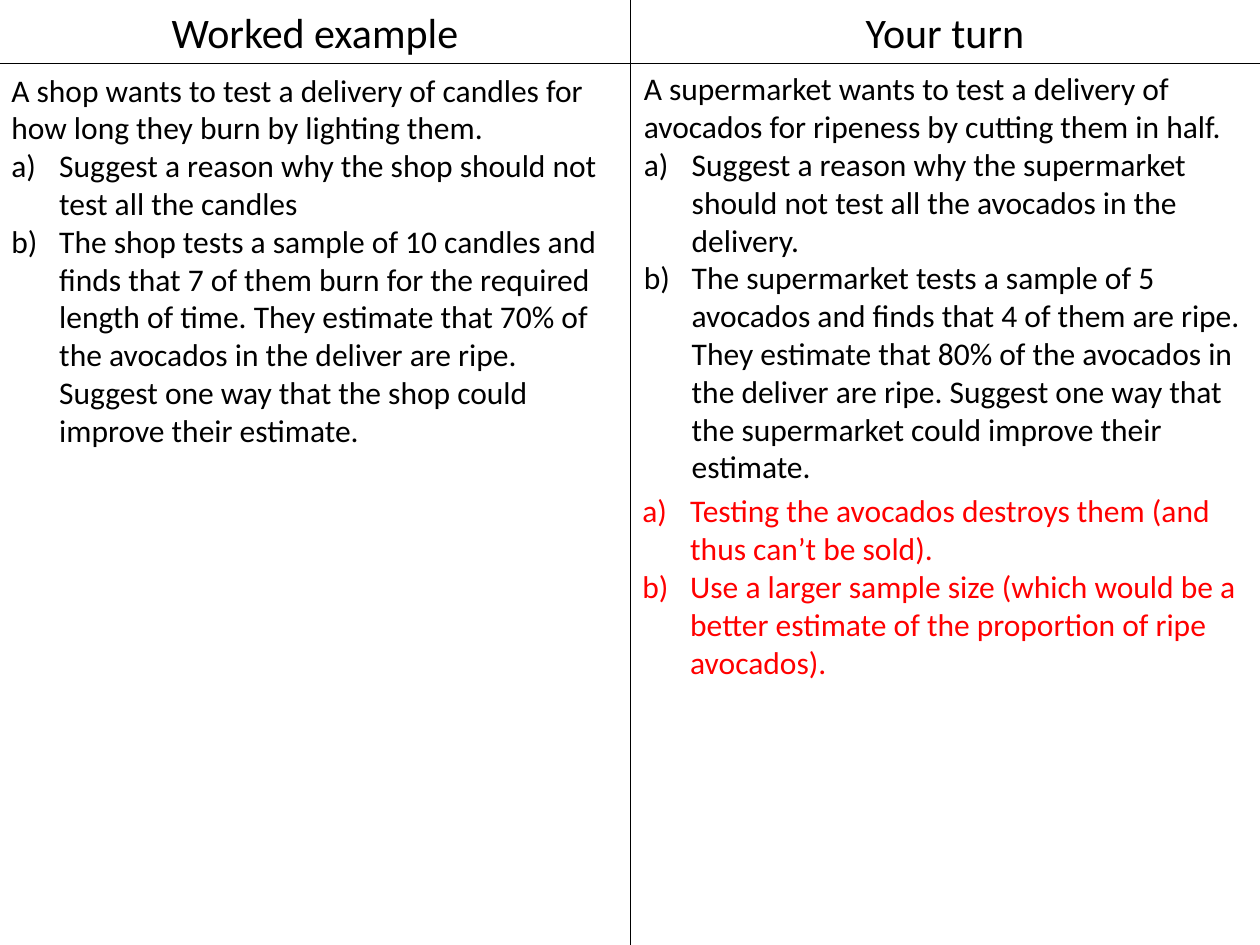
from lxml import etree
from pptx import Presentation
from pptx.dml.color import RGBColor
from pptx.enum.shapes import MSO_CONNECTOR
from pptx.enum.text import MSO_ANCHOR, MSO_AUTO_SIZE, PP_ALIGN
from pptx.oxml.ns import qn
from pptx.util import Inches, Pt

STRAIGHT = MSO_CONNECTOR.STRAIGHT
TOP = MSO_ANCHOR.TOP
NO_FIT = MSO_AUTO_SIZE.NONE
LEFT, CENTER = PP_ALIGN.LEFT, PP_ALIGN.CENTER
COMPARISON_LAYOUT = 4
WIDTH, HEIGHT = Inches(10), Inches(7.5)
COLUMN, HEADER = WIDTH // 2, HEIGHT // 15
HANG = Inches(0.38)
BLACK, RED = "000000", "FF0000"

FRAME_FORMAT = {"word_wrap": True, "auto_size": NO_FIT, "vertical_anchor": TOP,
                "margin_left": Inches(0.1), "margin_right": Inches(0.1),
                "margin_top": Inches(0.05), "margin_bottom": Inches(0.05)}
PARA_FORMAT = {"space_before": Pt(0), "space_after": Pt(0), "line_spacing": 1.0}

WORKED_EXAMPLE = {
    "heading": "Worked example",
    "intro": "A shop wants to test a delivery of candles for how long they burn by lighting them.",
    "parts": [
        "Suggest a reason why the shop should not test all the candles",
        "The shop tests a sample of 10 candles and finds that 7 of them burn for the required "
        "length of time. They estimate that 70% of the avocados in the deliver are ripe. "
        "Suggest one way that the shop could improve their estimate.",
    ],
}
YOUR_TURN = {
    "heading": "Your turn",
    "intro": "A supermarket wants to test a delivery of avocados for ripeness by cutting them in half.",
    "parts": [
        "Suggest a reason why the supermarket should not test all the avocados in the delivery.",
        "The supermarket tests a sample of 5 avocados and finds that 4 of them are ripe. "
        "They estimate that 80% of the avocados in the deliver are ripe. "
        "Suggest one way that the supermarket could improve their estimate.",
    ],
}
ANSWERS = [
    "Testing the avocados destroys them (and thus can’t be sold).",
    "Use a larger sample size (which would be a better estimate of the proportion of ripe avocados).",
]


def colour(value):
    """Turn a hex string into a colour."""
    return RGBColor.from_string(value)


def apply_format(target, values):
    """Set every attribute named in a dict of format values."""
    for name, value in values.items():
        setattr(target, name, value)


def place(shape, box):
    """Move a shape to a box of left, top, width and height."""
    apply_format(shape, dict(zip(("left", "top", "width", "height"), box)))


def set_marker(para, lettered):
    """Give a paragraph a hanging a), b) letter, or no marker."""
    props = para._p.get_or_add_pPr()
    indent = HANG if lettered else 0
    props.set("marL", str(indent))
    props.set("indent", str(-indent))
    if lettered:
        etree.SubElement(props, qn("a:buFont"), typeface="+mj-lt")
        etree.SubElement(props, qn("a:buAutoNum"), type="alphaLcParenR")
    else:
        etree.SubElement(props, qn("a:buNone"))


def write(shape, lines, size=18, ink=BLACK, align=LEFT):
    """Fill a shape with (text, lettered) lines."""
    frame = shape.text_frame
    apply_format(frame, FRAME_FORMAT)
    for number, (text, lettered) in enumerate(lines):
        para = frame.add_paragraph() if number else frame.paragraphs[0]
        apply_format(para, PARA_FORMAT | {"alignment": align})
        set_marker(para, lettered)
        span = para.add_run()
        span.text = text
        apply_format(span.font, {"name": "Calibri", "size": Pt(size), "bold": False})
        span.font.color.rgb = colour(ink)


def lettered_lines(texts):
    """Mark each text as a lettered line."""
    return [(text, True) for text in texts]


def add_question(heading, body, question, box, shift):
    """Place a heading and its question in a column, the question moved by shift."""
    left, top, width, height = box
    place(heading, (left, top, width, HEADER))
    write(heading, [(question["heading"], False)], size=24, align=CENTER)
    across, down = shift
    place(body, (left + across, top + HEADER + down, width, height))
    write(body, [(question["intro"], False)] + lettered_lines(question["parts"]))


def add_answers(page, box):
    """Add the lettered answers in red."""
    write(page.shapes.add_textbox(*box), lettered_lines(ANSWERS), ink=RED)


def add_rule(page, start, end):
    """Draw a thin black line between two points."""
    rule = page.shapes.add_connector(STRAIGHT, *start, *end)
    rule.line.width = Pt(0.5)
    rule.line.color.rgb = colour(BLACK)
    etree.SubElement(rule._element.spPr, qn("a:effectLst"))


def main():
    """Build the two-column question slide."""
    deck = Presentation()
    apply_format(deck, {"slide_width": WIDTH, "slide_height": HEIGHT})
    page = deck.slides.add_slide(deck.slide_layouts[COMPARISON_LAYOUT])
    title, *slots = page.placeholders
    title._element.getparent().remove(title._element)
    add_rule(page, (0, HEADER), (WIDTH, HEADER))
    add_rule(page, (COLUMN, 0), (COLUMN, HEIGHT))
    nudge = Inches(0.01)
    add_question(*slots[:2], WORKED_EXAMPLE, (0, 0, COLUMN, Inches(3.13)), (-nudge, nudge))
    add_question(*slots[2:], YOUR_TURN, (COLUMN, 0, COLUMN, Inches(3.43)), (nudge, 0))
    add_answers(page, (COLUMN, Inches(3.85), COLUMN, Inches(1.62)))
    deck.save("out.pptx")


if __name__ == "__main__":
    main()
